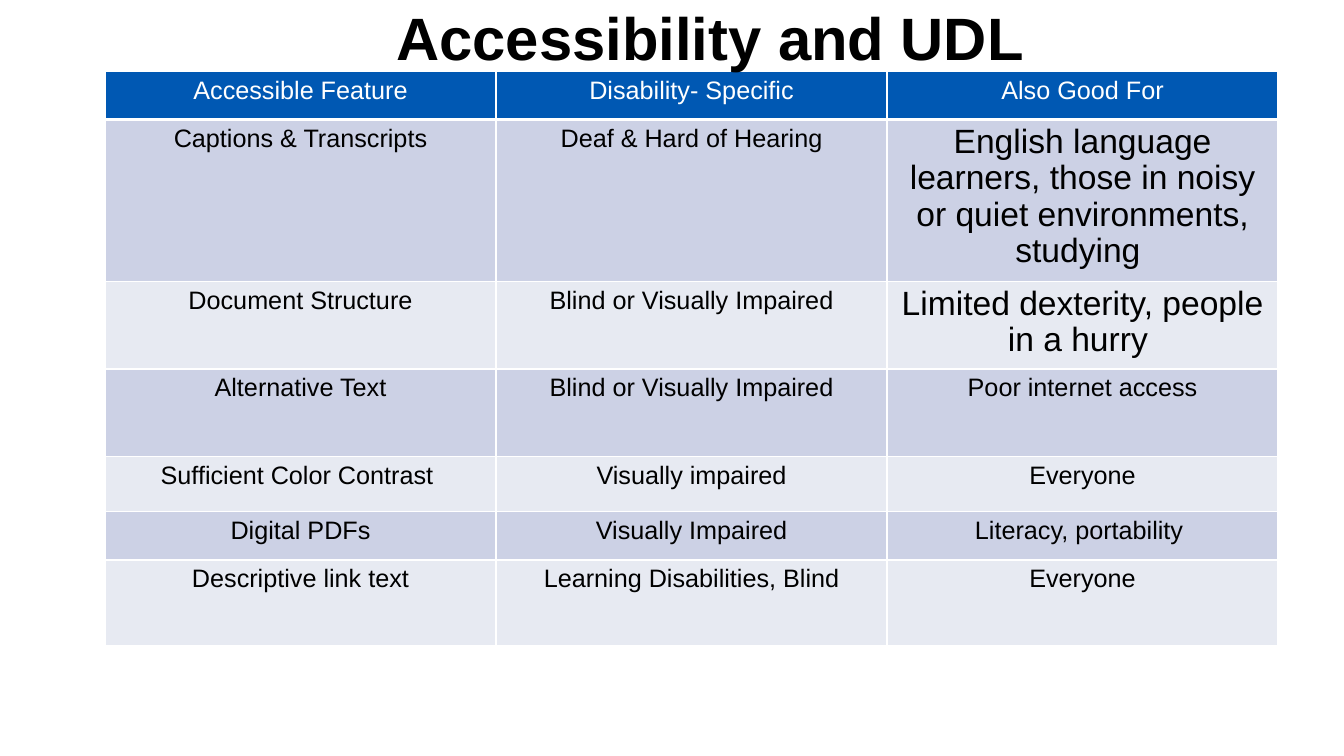
"""Builds the slide on accessibility features and whom they help."""
from dataclasses import dataclass

from lxml import etree
from pptx import Presentation
from pptx.dml.color import RGBColor
from pptx.enum.text import MSO_ANCHOR, PP_ALIGN
from pptx.oxml.ns import qn
from pptx.util import Pt

CENTER = PP_ALIGN.CENTER
MIDDLE = MSO_ANCHOR.MIDDLE
EDGES = ("L", "R", "T", "B")


@dataclass(frozen=True)
class Theme:
    font: str = "Arial"
    black: str = "000000"
    white: str = "FFFFFF"
    header: str = "0058B3"
    bands: tuple = ("CCD1E5", "E7EAF2")
    title_size: float = 42.7
    body_size: float = 18
    large_size: float = 24
    large_spacing: float = 0.97
    rule: float = 1
    header_rule: float = 3


HEADINGS = ("Accessible Feature", "Disability- Specific", "Also Good For")
FEATURES = (
    ("Captions & Transcripts", "Deaf & Hard of Hearing",
     "English language learners, those in noisy or quiet environments, studying "),
    ("Document Structure", "Blind or Visually Impaired",
     "Limited dexterity, people in a hurry "),
    ("Alternative Text", "Blind or Visually Impaired", "Poor internet access"),
    ("Sufficient Color Contrast ", "Visually impaired", "Everyone"),
    ("Digital PDFs", "Visually Impaired", "Literacy, portability "),
    ("Descriptive link text", "Learning Disabilities, Blind", "Everyone"),
)
ROW_HEIGHTS = (34.2, 115.7, 62.6, 62.6, 39.3, 34.6, 61.2)
COLUMN_WIDTH = 279.3
LARGE_CELLS = {(1, 2), (2, 2)}


def write_text(frame, text, *, font, size, color, bold=False, spacing=None):
    frame.word_wrap = True
    para = frame.paragraphs[0]
    para.alignment = CENTER
    if spacing:
        para.line_spacing = spacing
    span = para.add_run()
    span.text = text
    span.font.name = font
    span.font.size = Pt(size)
    span.font.bold = bold
    span.font.color.rgb = RGBColor.from_string(color)


class SlideBuilder:
    def __init__(self, page, theme):
        self.page = page
        self.theme = theme

    def title(self, text, left, top, width, height):
        box = self.page.shapes.add_textbox(Pt(left), Pt(top), Pt(width), Pt(height))
        box.text_frame.vertical_anchor = MIDDLE
        write_text(box.text_frame, text, font=self.theme.font, bold=True,
                   size=self.theme.title_size, color=self.theme.black)

    def borders(self, cell, bottom_width):
        properties = cell._tc.get_or_add_tcPr()
        for edge in EDGES:
            width = bottom_width if edge == "B" else self.theme.rule
            line = etree.SubElement(properties, qn(f"a:ln{edge}"), w=str(Pt(width)))
            fill = etree.SubElement(line, qn("a:solidFill"))
            etree.SubElement(fill, qn("a:srgbClr"), val=self.theme.white)

    def cell(self, cell, text, row, large):
        theme = self.theme
        is_header = row == 0
        self.borders(cell, theme.header_rule if is_header else theme.rule)
        cell.fill.solid()
        fill = theme.header if is_header else theme.bands[(row - 1) % 2]
        cell.fill.fore_color.rgb = RGBColor.from_string(fill)
        write_text(cell.text_frame, text, font=theme.font,
                   size=theme.large_size if large else theme.body_size,
                   color=theme.white if is_header else theme.black,
                   spacing=theme.large_spacing if large else None)

    def table(self, rows, left, top):
        count = len(rows[0])
        table = self.page.shapes.add_table(
            len(rows), count, Pt(left), Pt(top),
            Pt(COLUMN_WIDTH * count), Pt(sum(ROW_HEIGHTS))).table
        table.first_row = False
        table.horz_banding = False
        for column in table.columns:
            column.width = Pt(COLUMN_WIDTH)
        for row, texts in enumerate(rows):
            table.rows[row].height = Pt(ROW_HEIGHTS[row])
            for column, text in enumerate(texts):
                self.cell(table.cell(row, column), text, row,
                          (row, column) in LARGE_CELLS)


def main():
    deck = Presentation()
    deck.slide_width, deck.slide_height = Pt(960), Pt(540)
    page = deck.slides.add_slide(deck.slide_layouts[6])
    builder = SlideBuilder(page, Theme())
    builder.table((HEADINGS, *FEATURES), 75, 51.1)
    builder.title("Accessibility and UDL ", 105, 0.7, 816, 50.4)
    deck.save("out.pptx")


if __name__ == "__main__":
    main()
